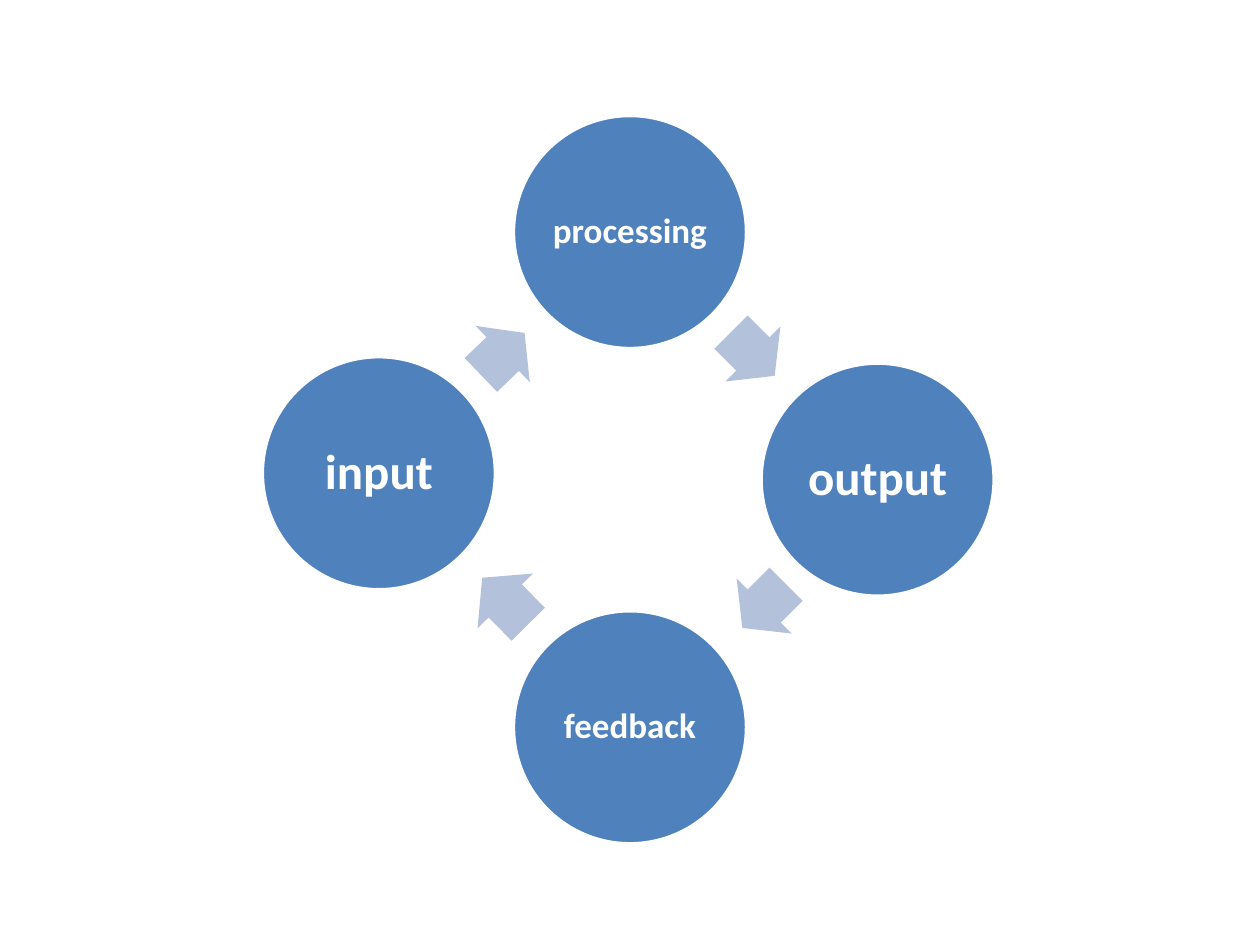
from pptx import Presentation
from pptx.dml.color import RGBColor
from pptx.enum.shapes import MSO_SHAPE as Shape
from pptx.enum.text import MSO_ANCHOR as Anchor, PP_ALIGN as Align
from pptx.util import Pt

COLORS = {"circle": "4F81BD", "arrow": "B3C1DB", "white": "FFFFFF"}
DIAMETER = 133.2
ARROW_HEIGHT = 44.6

# Each stage: label, size, inset, circle centre
stages = [
    ("processing", 20, 2, (360, 132.6)),
    ("output", 28, 2.8, (501.5, 274.1)),
    ("feedback", 20, 2, (360, 415.6)),
    ("input", 28, 2.8, (216.5, 270.4)),
]
# The arrow leaving each stage: centre, length, rotation
arrows = [
    ((430.2, 202.3), 35.3, 45),
    ((436.7, 346.3), 35.3, 135),
    ((288.7, 343.4), 37.4, 225.3),
    ((287.3, 202.3), 34.6, 316.1),
]

deck = Presentation()
deck.slide_width, deck.slide_height = Pt(720), Pt(540)
page = deck.slides.add_slide(deck.slide_layouts[6])


def add_centred(kind, centre, width, height, color):
    x, y = centre
    shape = page.shapes.add_shape(
        kind, Pt(x - width / 2), Pt(y - height / 2), Pt(width), Pt(height))
    shape.shadow.inherit = False
    shape.fill.solid()
    shape.fill.fore_color.rgb = RGBColor.from_string(COLORS[color])
    return shape


for (label, size, inset, middle), (centre, length, angle) in zip(stages, arrows):
    # Stage circle with its label
    circle = add_centred(Shape.OVAL, middle, DIAMETER, DIAMETER, "circle")
    circle.line.color.rgb = RGBColor.from_string(COLORS["white"])
    circle.line.width = Pt(2)
    frame = circle.text_frame
    frame.word_wrap = True
    frame.vertical_anchor = Anchor.MIDDLE
    for side in ("left", "top", "right", "bottom"):
        setattr(frame, f"margin_{side}", Pt(inset))
    para = frame.paragraphs[0]
    para.alignment = Align.CENTER
    para.line_spacing = 0.9
    span = para.add_run()
    span.text = label
    for name, value in {"name": "Calibri", "size": Pt(size), "bold": True}.items():
        setattr(span.font, name, value)
    span.font.color.rgb = RGBColor.from_string(COLORS["white"])

    # Arrow to the next stage
    arrow = add_centred(Shape.RIGHT_ARROW, centre, length, ARROW_HEIGHT, "arrow")
    arrow.line.fill.background()
    arrow.adjustments[0] = 0.6
    arrow.adjustments[1] = 0.5
    arrow.rotation = angle

deck.save("out.pptx")
